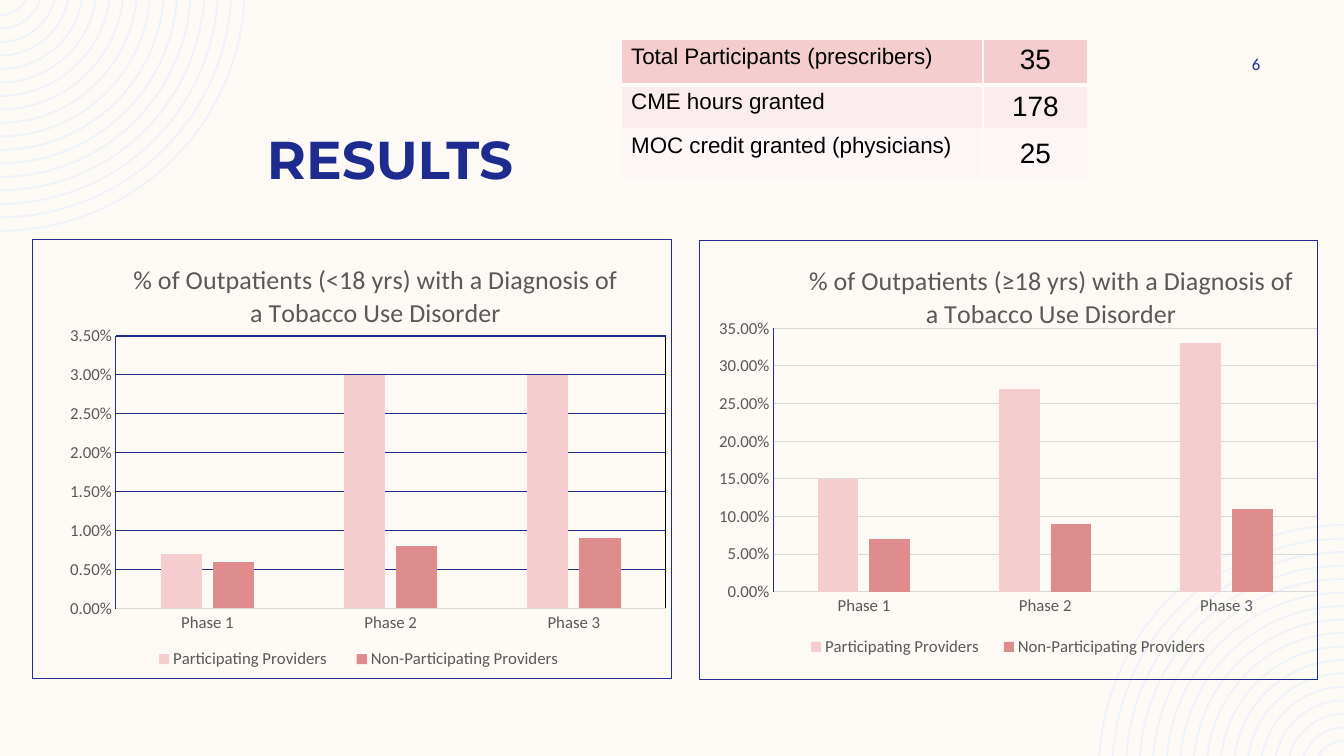
from math import asin, cos, degrees, pi, sin

from lxml.etree import SubElement
from pptx import Presentation
from pptx.chart.data import CategoryChartData
from pptx.dml.color import RGBColor
from pptx.enum.chart import XL_CHART_TYPE as ChartType
from pptx.enum.chart import XL_LEGEND_POSITION as LegendPosition
from pptx.enum.chart import XL_TICK_MARK as TickMark
from pptx.enum.text import MSO_ANCHOR as Anchor
from pptx.enum.text import PP_ALIGN as Align
from pptx.oxml import parse_xml
from pptx.oxml.ns import nsdecls, qn
from pptx.util import Inches, Pt

CREAM = RGBColor(0xFD, 0xFA, 0xF6)
PALE_BLUE = RGBColor(0xEE, 0xF3, 0xFA)
NAVY = RGBColor(0x1F, 0x2C, 0x8F)
FRAME_BLUE = RGBColor(0x20, 0x2C, 0x8F)
BLACK = RGBColor(0x00, 0x00, 0x00)
GRAY = RGBColor(0x59, 0x59, 0x59)
LIGHT_GRAY = RGBColor(0xD9, 0xD9, 0xD9)
PINK = RGBColor(0xF5, 0xCD, 0xCE)
ROSE = RGBColor(0xDE, 0x8C, 0x8C)
ROW_FILLS = [PINK, RGBColor(0xFB, 0xED, 0xED), RGBColor(0xFD, 0xF6, 0xF6)]

SLIDE_WIDTH, SLIDE_HEIGHT = 13.33, 7.5
RING_COUNT, RING_WIDTH, RING_OFFSET = 17, 0.02, 0.14
SMALLEST_RING, LARGEST_RING = 0.3, 2.44

TABLE_ROWS = [
    ("Total Participants (prescribers)", "35"),
    ("CME hours granted", "178"),
    ("MOC credit granted (physicians)", "25"),
]
PHASES = ["Phase 1", "Phase 2", "Phase 3"]
SERIES_COLORS = {"Participating Providers": PINK, "Non-Participating Providers": ROSE}
CHARTS = [
    {
        "box": (0.32, 2.37, 6.35, 4.37),
        "title": "% of Outpatients (<18 yrs) with a Diagnosis of a Tobacco Use Disorder",
        "values": [(0.007, 0.03, 0.03), (0.006, 0.008, 0.009)],
        "scale": {"minimum_scale": 0, "maximum_scale": 0.035, "major_unit": 0.005},
        "grid": NAVY,
        "plot_border": BLACK,
        "layouts": {
            "title": (0.15, 0.04),
            "plotArea": (0.13, 0.22, 0.86, 0.62),
            "legend": (0.16, 0.92, 0.7, 0.07),
        },
    },
    {
        "box": (6.93, 2.38, 6.14, 4.37),
        "title": "% of Outpatients (≥18 yrs) with a Diagnosis of a Tobacco Use Disorder",
        "values": [(0.15, 0.27, 0.33), (0.07, 0.09, 0.11)],
        "scale": {"minimum_scale": 0, "maximum_scale": 0.35, "major_unit": 0.05},
        "grid": LIGHT_GRAY,
        "plot_border": None,
        "layouts": {
            "title": (0.17, 0.04),
            "plotArea": (0.12, 0.2, 0.88, 0.6),
            "legend": (0.15, 0.89, 0.7, 0.07),
        },
    },
]


def apply_format(target, values):
    for name, value in values.items():
        setattr(target, name, value)


def style_font(font, color, **values):
    apply_format(font, values)
    font.color.rgb = color


def style_line(line, color):
    line.width = Pt(0.75)
    line.color.rgb = color


def arc_segment(radius, start, sweep):
    size = Inches(radius)
    return parse_xml(
        f'<a:arcTo {nsdecls("a")} wR="{size}" hR="{size}" '
        f'stAng="{round(start * 60000)}" swAng="{round(sweep * 60000)}"/>')


def add_rings(slide, corner, direction):
    def point(radius, angle):
        across = radius * cos(angle)
        down = radius * sin(angle) - RING_OFFSET
        return Inches(corner[0] + direction * across), Inches(corner[1] + direction * down)

    spacing = (LARGEST_RING - SMALLEST_RING) / (RING_COUNT - 1)
    turn = 0 if direction == 1 else 180
    builder = None
    arcs = []
    for index in range(RING_COUNT):
        outer = LARGEST_RING - spacing * index
        inner = outer - RING_WIDTH
        outer_start, inner_start = (asin(RING_OFFSET / radius) for radius in (outer, inner))
        corners = [point(outer, outer_start), point(outer, pi / 2),
                   point(inner, pi / 2), point(inner, inner_start)]
        if builder is None:
            builder = slide.shapes.build_freeform(*corners[0])
        else:
            builder.move_to(*corners[0])
        builder.add_line_segments(corners[1:], close=True)
        arcs += [
            arc_segment(outer, turn + degrees(outer_start), 90 - degrees(outer_start)),
            None,
            arc_segment(inner, turn + 90, degrees(inner_start) - 90),
        ]
    shape = builder.convert_to_shape()
    for segment, arc in zip(shape.element.xpath(".//a:lnTo"), arcs):
        if arc is not None:
            segment.getparent().replace(segment, arc)
    shape.shadow.inherit = False
    shape.fill.solid()
    shape.fill.fore_color.rgb = PALE_BLUE
    shape.line.fill.background()


def add_text(slide, box, text, frame_format, paragraph_format, font_format):
    frame = slide.shapes.add_textbox(*map(Inches, box)).text_frame
    apply_format(frame, {"word_wrap": True, "vertical_anchor": Anchor.MIDDLE, **frame_format})
    paragraph = frame.paragraphs[0]
    apply_format(paragraph, paragraph_format)
    run = paragraph.add_run()
    run.text = text
    style_font(run.font, NAVY, **font_format)


def add_cell_borders(cell, bottom_width):
    properties = cell._tc.get_or_add_tcPr()
    widths = {"lnL": 1, "lnR": 1, "lnT": 1, "lnB": bottom_width}
    for index, (tag, width) in enumerate(widths.items()):
        properties.insert(index, parse_xml(
            f'<a:{tag} {nsdecls("a")} w="{Pt(width)}"><a:solidFill>'
            f'<a:srgbClr val="{CREAM}"/></a:solidFill></a:{tag}>'))


def add_participant_table(slide, box):
    table = slide.shapes.add_table(3, 2, *map(Inches, box)).table
    apply_format(table, {"first_row": False, "horz_banding": False})
    for column, width in zip(table.columns, (3.59, 1.04)):
        column.width = Inches(width)
    for row, height in zip(table.rows, (0.45, 0.4, 0.51)):
        row.height = Inches(height)
    for row_index, texts in enumerate(TABLE_ROWS):
        for column_index, text in enumerate(texts):
            cell = table.cell(row_index, column_index)
            cell.text = text
            is_number = column_index == 1
            cell.vertical_anchor = Anchor.MIDDLE if is_number and row_index else Anchor.TOP
            cell.fill.solid()
            cell.fill.fore_color.rgb = ROW_FILLS[row_index]
            add_cell_borders(cell, 1 if row_index else 3)
            paragraph = cell.text_frame.paragraphs[0]
            paragraph.alignment = Align.CENTER if is_number else Align.LEFT
            style_font(paragraph.runs[0].font, BLACK, name="Arial",
                       size=Pt(20 if is_number else 16), bold=False)


def set_layout(chart, tag, values):
    element = chart.element.xpath(f"//c:{tag}")[0]
    for layout in element.findall(qn("c:layout")):
        element.remove(layout)
    layout = parse_xml(f'<c:layout {nsdecls("c")}/>')
    manual = SubElement(layout, qn("c:manualLayout"))
    if tag == "plotArea":
        SubElement(manual, qn("c:layoutTarget")).set("val", "inner")
        element.insert(0, layout)
    else:
        element.find(qn("c:overlay")).addprevious(layout)
    for name in ("xMode", "yMode"):
        SubElement(manual, qn(f"c:{name}")).set("val", "edge")
    for name, value in zip("xywh", values):
        SubElement(manual, qn(f"c:{name}")).set("val", str(value))


def area_border(color):
    return parse_xml(
        f'<c:spPr {nsdecls("c", "a")}><a:noFill/><a:ln w="{Pt(0.75)}"><a:solidFill>'
        f'<a:srgbClr val="{color}"/></a:solidFill></a:ln></c:spPr>')


def add_phase_chart(slide, details):
    data = CategoryChartData(number_format="0.00%")
    data.categories = PHASES
    for name, values in zip(SERIES_COLORS, details["values"]):
        data.add_series(name, values)
    chart = slide.shapes.add_chart(
        ChartType.COLUMN_CLUSTERED, *map(Inches, details["box"]), data).chart
    style_font(chart.font, BLACK, name="Calibri", size=Pt(10))
    apply_format(chart, {"has_title": True, "has_legend": True})
    run = chart.chart_title.text_frame.paragraphs[0].add_run()
    run.text = details["title"]
    style_font(run.font, GRAY, name="Calibri", size=Pt(18.6), bold=False)
    chart.chart_title.include_in_layout = False
    apply_format(chart.legend, {"position": LegendPosition.BOTTOM, "include_in_layout": False})
    style_font(chart.legend.font, GRAY, name="Calibri", size=Pt(12))

    plot = chart.plots[0]
    apply_format(plot, {"gap_width": 219, "overlap": -27, "vary_by_categories": False})
    for series, color in zip(plot.series, SERIES_COLORS.values()):
        series.format.fill.solid()
        series.format.fill.fore_color.rgb = color
    for axis, color in ((chart.category_axis, LIGHT_GRAY), (chart.value_axis, FRAME_BLUE)):
        apply_format(axis, {"major_tick_mark": TickMark.NONE, "minor_tick_mark": TickMark.NONE})
        style_font(axis.tick_labels.font, GRAY, name="Calibri", size=Pt(12))
        style_line(axis.format.line, color)
    apply_format(chart.value_axis, {"has_major_gridlines": True, **details["scale"]})
    apply_format(chart.value_axis.tick_labels,
                 {"number_format": "0.00%", "number_format_is_linked": False})
    style_line(chart.value_axis.major_gridlines.format.line, details["grid"])

    for tag, values in details["layouts"].items():
        set_layout(chart, tag, values)
    chart.element.find(qn("c:chart")).addnext(area_border(FRAME_BLUE))
    if details["plot_border"] is not None:
        chart.element.xpath("//c:plotArea")[0].append(area_border(details["plot_border"]))


def main():
    presentation = Presentation()
    apply_format(presentation, {"slide_width": Inches(SLIDE_WIDTH),
                                "slide_height": Inches(SLIDE_HEIGHT)})
    slide = presentation.slides.add_slide(presentation.slide_layouts[6])
    slide.background.fill.solid()
    slide.background.fill.fore_color.rgb = CREAM
    add_rings(slide, (0, 0), 1)
    add_rings(slide, (SLIDE_WIDTH, SLIDE_HEIGHT), -1)
    add_text(slide, (2.55, 0.8, 4.04, 1.49), "RESULTS", {}, {"line_spacing": Pt(48.8)},
             {"name": "Montserrat", "size": Pt(38), "bold": True})
    add_text(slide, (11.42, 0.5, 1.08, 0.27), "6", {"margin_right": 0},
             {"alignment": Align.RIGHT}, {"name": "Calibri", "size": Pt(12)})
    add_participant_table(slide, (6.16, 0.39, 4.63, 1.36))
    for details in CHARTS:
        add_phase_chart(slide, details)
    presentation.save("out.pptx")


if __name__ == "__main__":
    main()
